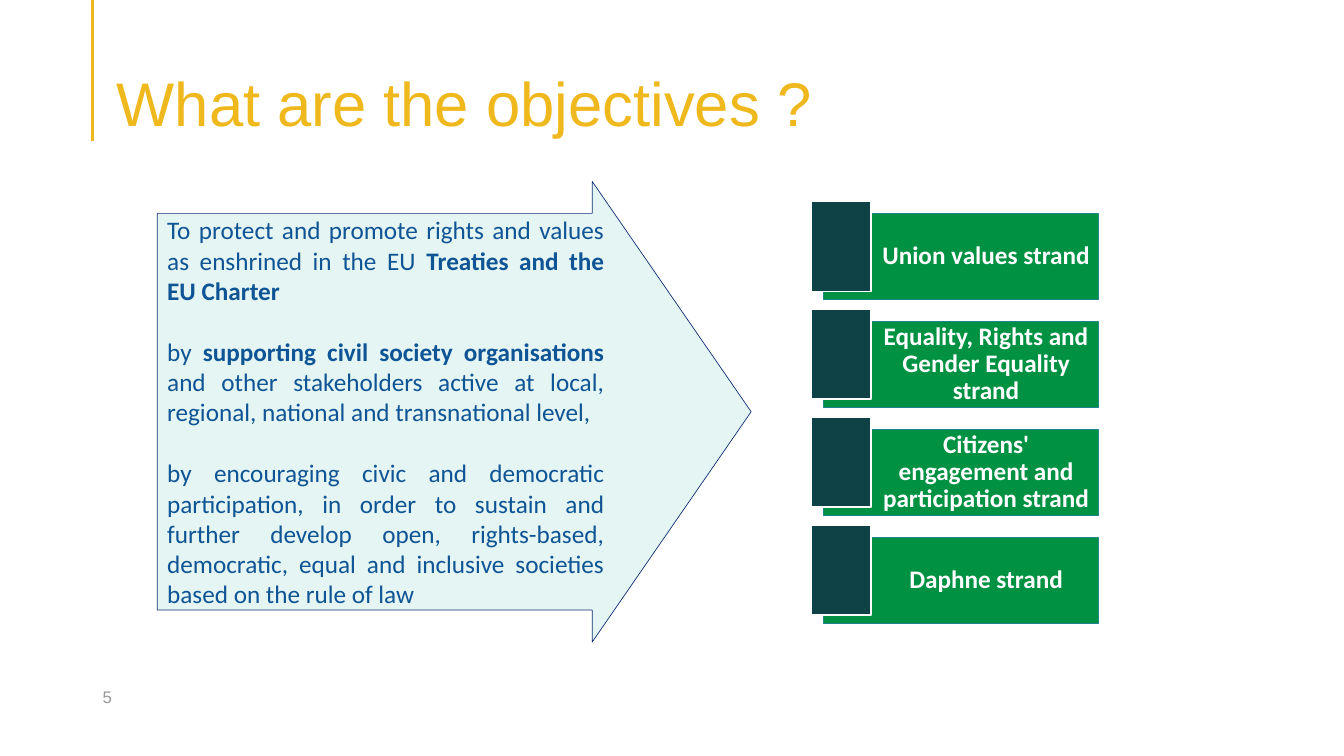
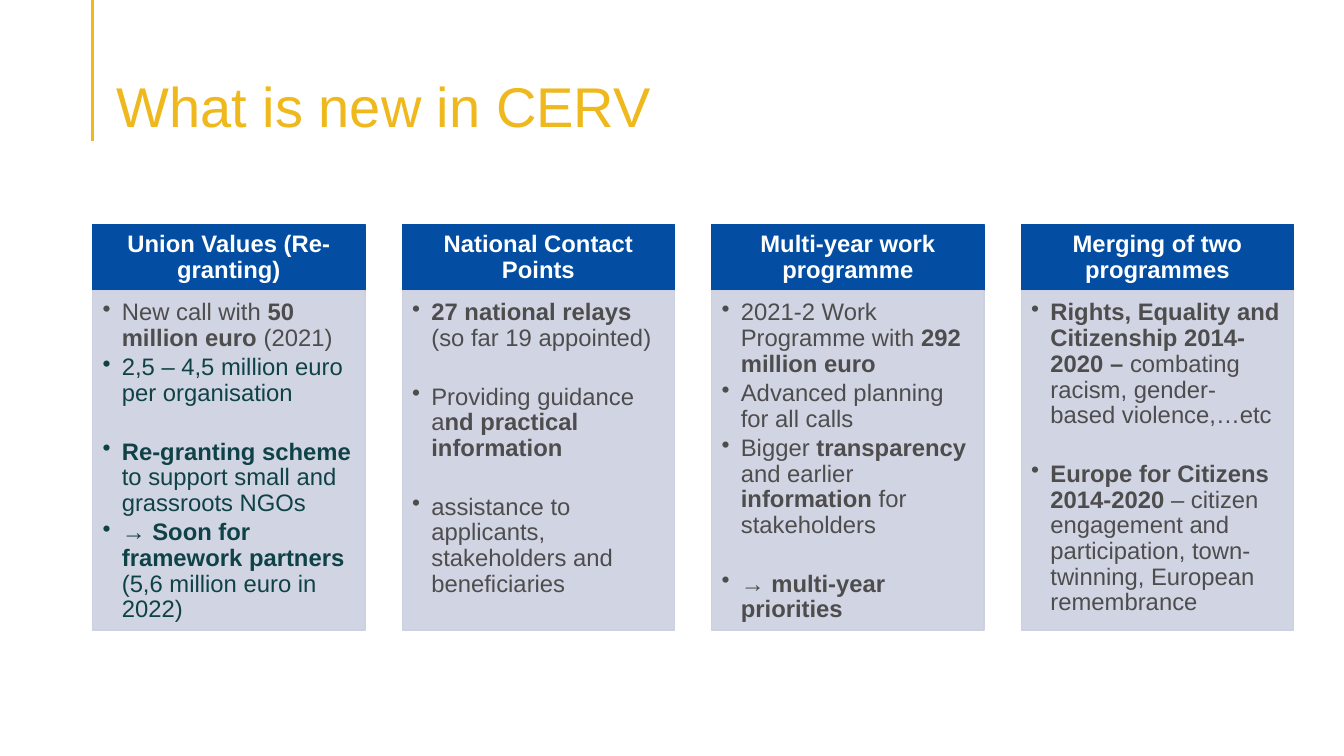
import pptx
import pptx.util
import pptx.dml.color
import pptx.enum.shapes
import pptx.enum.text
import lxml.etree
from dataclasses import dataclass

Inches = pptx.util.Inches
Pt = pptx.util.Pt
RGB = pptx.dml.color.RGBColor.from_string
SHAPE = pptx.enum.shapes.MSO_SHAPE
ALIGN = pptx.enum.text.PP_ALIGN
ANCHOR = pptx.enum.text.MSO_ANCHOR
A = "{http://schemas.openxmlformats.org/drawingml/2006/main}"


@dataclass(frozen=True)
class Theme:
    gold: str = "EFB81D"
    blue: str = "034EA2"
    text_blue: str = "0F5494"
    outline: str = "133176"
    aqua: str = "4EBEBB"
    green: str = "009242"
    teal: str = "1E858B"
    dark_teal: str = "0F4246"
    panel: str = "CCD0E0"
    grey: str = "4D4D4D"
    light_grey: str = "979797"
    white: str = "FFFFFF"
    font: str = "Arial"
    diagram_font: str = "Calibri"
    diagram_size: float = 18
    column_size: float = 17
    number_size: float = 12


theme = Theme()


def add_box(s, kind, at, fill, line, line_width, alpha=100):
    """Add a filled preset shape; alpha is the opacity of its fill in percent."""
    sp = s.shapes.add_shape(kind, *map(Inches, at))
    sp.shadow.inherit = False
    sp.fill.solid()
    sp.fill.fore_color.rgb = RGB(fill)
    sp.line.color.rgb = RGB(line)
    sp.line.width = Pt(line_width)
    if alpha < 100:
        color = sp._element.spPr.find(f"{A}solidFill/{A}srgbClr")
        lxml.etree.SubElement(color, f"{A}alpha", val=str(alpha * 1000))
    return sp


def write(p, text, font, size, color, bold=False):
    """Fill a paragraph; text between asterisks is bold."""
    for i, part in enumerate(text.split("*")):
        if part:
            r = p.add_run()
            r.text = part
            r.font.name = font
            r.font.size = Pt(size)
            r.font.bold = bold or i % 2 == 1
            r.font.color.rgb = RGB(color)


prs = pptx.Presentation()
prs.slide_width, prs.slide_height = Inches(13.33), Inches(7.5)

# Shared frame: gold rule and title
slides = []
for title, size in [("What are the objectives ?", 44), ("What is new in CERV", 40)]:
    s = prs.slides.add_slide(prs.slide_layouts[6])
    rule = s.shapes.add_connector(pptx.enum.shapes.MSO_CONNECTOR.STRAIGHT,
                                  Inches(0.92), 0, Inches(0.92), Inches(1.4))
    rule.line.color.rgb = RGB(theme.gold)
    rule.line.width = Pt(2.25)
    lxml.etree.SubElement(rule._element.spPr, f"{A}effectLst")
    tf = s.shapes.add_textbox(Inches(1.06), Inches(0.53), Inches(11.5), Inches(0.86)).text_frame
    tf.word_wrap = True
    tf.vertical_anchor = ANCHOR.BOTTOM
    tf.margin_bottom = 0
    tf.paragraphs[0].line_spacing = 0.9
    write(tf.paragraphs[0], title, theme.font, size, theme.gold)
    slides.append(s)
objectives, news = slides

# Objectives: arrow with the aims
tf = objectives.shapes.add_textbox(Inches(0.92), Inches(6.71), Inches(3), Inches(0.4)).text_frame
tf.word_wrap = True
tf.vertical_anchor = ANCHOR.MIDDLE
write(tf.paragraphs[0], "5", theme.font, theme.number_size, theme.light_grey)

aims = [
    "To protect and promote rights and values as enshrined in the EU *Treaties and the EU Charter*",
    "by *supporting civil society organisations* and other stakeholders active at local, "
    "regional, national and transnational level,",
    "by encouraging civic and democratic participation, in order to sustain and further develop "
    "open, rights-based, democratic, equal and inclusive societies based on the rule of law",
]
arrow = add_box(objectives, SHAPE.RIGHT_ARROW, (1.56, 1.8, 5.89, 4.57),
                theme.aqua, theme.outline, 0.5, alpha=15)
arrow.adjustments[0], arrow.adjustments[1] = 0.861, 0.345
tf = arrow.text_frame
tf.word_wrap = True
tf.vertical_anchor = ANCHOR.MIDDLE
for i, aim in enumerate(aims):
    p = tf.add_paragraph() if i else tf.paragraphs[0]
    p.alignment = ALIGN.JUSTIFY
    if i:
        p.space_before = Pt(22)
    write(p, aim, theme.diagram_font, theme.diagram_size, theme.text_blue)

# Objectives: the four strands
strands = ["Union values strand", "Equality, Rights and Gender Equality strand",
           "Citizens' engagement and participation strand", "Daphne strand"]
for i, strand in enumerate(strands):
    top = 2.12 + i * 1.07
    bar = add_box(objectives, SHAPE.RECTANGLE, (8.17, top, 2.72, 0.85),
                  theme.green, theme.teal, 0.5)
    tf = bar.text_frame
    tf.word_wrap = True
    tf.vertical_anchor = ANCHOR.MIDDLE
    tf.margin_left = Inches(0.57)
    tf.margin_top = tf.margin_right = tf.margin_bottom = Inches(0.07)
    p = tf.paragraphs[0]
    p.alignment = ALIGN.CENTER
    p.line_spacing = 0.9
    write(p, strand, theme.diagram_font, theme.diagram_size, theme.white, bold=True)
    add_box(objectives, SHAPE.RECTANGLE, (8.05, top - 0.12, 0.59, 0.89),
            theme.dark_teal, theme.white, 1)

# News: four columns; each point is (text, colour, wide gap above)
columns = [
    ("Union Values (Re-granting)", [
        ("New call with *50 million euro* (2021)", theme.grey, False),
        ("2,5 – 4,5 million euro per organisation", theme.dark_teal, False),
        ("*Re-granting scheme* to support small and grassroots NGOs", theme.dark_teal, True),
        ("→ *Soon for framework partners* (5,6 million euro in 2022)", theme.dark_teal, False)]),
    ("National Contact Points", [
        ("*27 national relays* (so far 19 appointed)", theme.grey, False),
        ("Providing guidance a*nd practical information*", theme.grey, True),
        ("assistance to applicants, stakeholders and beneficiaries", theme.grey, True)]),
    ("Multi-year work programme", [
        ("2021-2 Work Programme with *292 million euro*", theme.grey, False),
        ("Advanced planning for all calls", theme.grey, False),
        ("Bigger *transparency* and earlier *information* for stakeholders", theme.grey, False),
        ("→ *multi-year priorities*", theme.grey, True)]),
    ("Merging of two programmes", [
        ("*Rights, Equality and Citizenship 2014-2020 –* combating racism, "
         "gender-based violence,…etc", theme.grey, False),
        ("*Europe for Citizens 2014-2020* – citizen engagement and participation, "
         "town-twinning, European remembrance", theme.grey, True)]),
]
for i, (heading, points) in enumerate(columns):
    left = 0.92 + i * 3.07
    header = add_box(news, SHAPE.RECTANGLE, (left, 2.23, 2.7, 0.65), theme.blue, theme.blue, 1)
    tf = header.text_frame
    tf.word_wrap = True
    tf.vertical_anchor = ANCHOR.MIDDLE
    tf.margin_left = tf.margin_right = Inches(0.13)
    tf.margin_top = tf.margin_bottom = Inches(0.08)
    p = tf.paragraphs[0]
    p.alignment = ALIGN.CENTER
    p.line_spacing = 0.9
    write(p, heading, theme.font, theme.column_size, theme.white, bold=True)

    panel = add_box(news, SHAPE.RECTANGLE, (left, 2.88, 2.7, 3.37),
                    theme.panel, theme.panel, 1, alpha=90)
    tf = panel.text_frame
    tf.word_wrap = True
    tf.vertical_anchor = ANCHOR.TOP
    tf.margin_left = tf.margin_top = Inches(0.1)
    tf.margin_right, tf.margin_bottom = Inches(0.13), Inches(0.15)
    for j, (point, color, gap) in enumerate(points):
        p = tf.add_paragraph() if j else tf.paragraphs[0]
        pPr = p._p.get_or_add_pPr()
        pPr.set("marL", str(Inches(0.19)))
        pPr.set("indent", str(-Inches(0.19)))
        lxml.etree.SubElement(pPr, f"{A}buChar", char="•")
        p.alignment = ALIGN.LEFT
        p.line_spacing = 0.9
        p.space_after = Pt(2.5)
        if gap:
            p.space_before = Pt(21)
        write(p, point, theme.font, theme.column_size, color)

prs.save("out.pptx")
